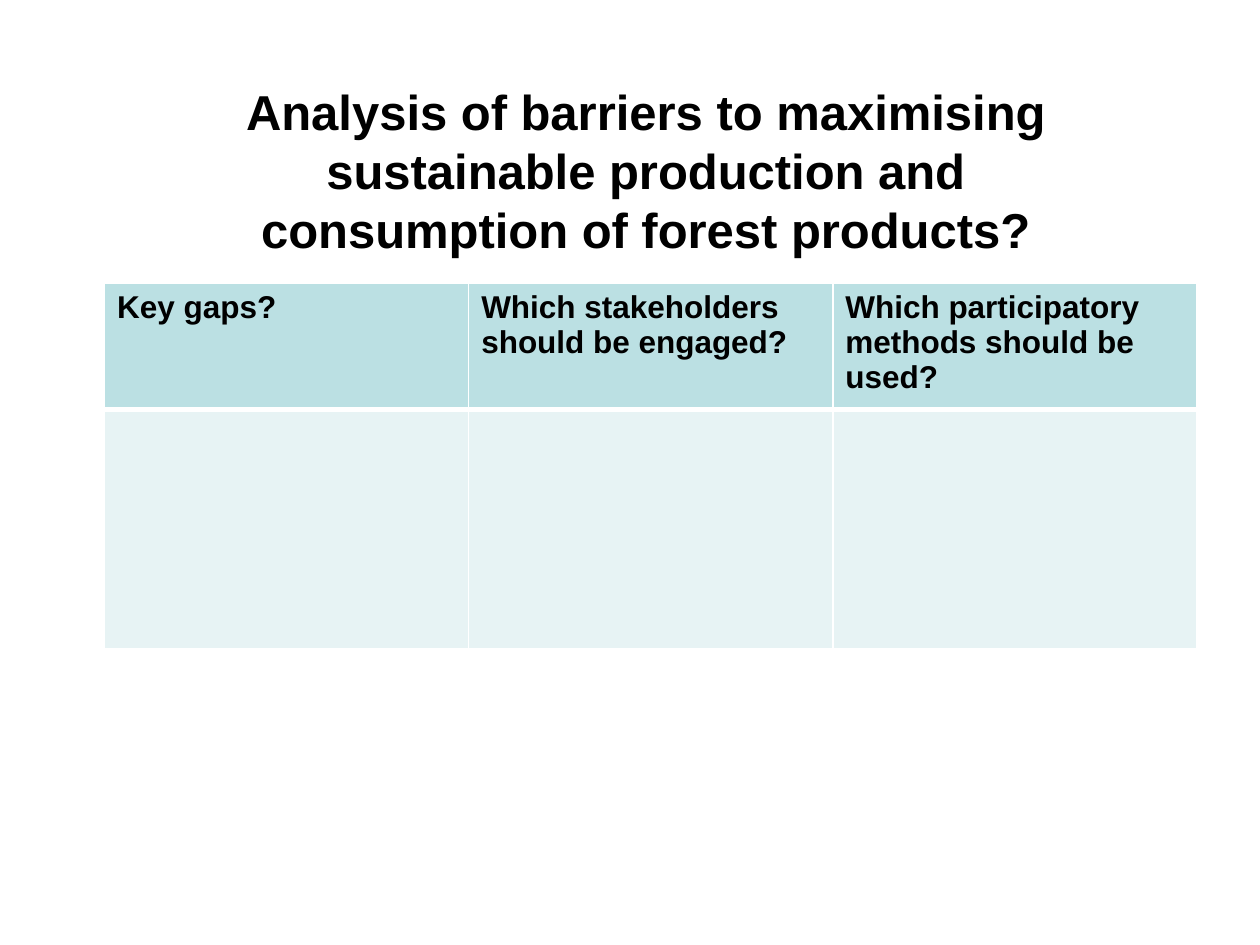
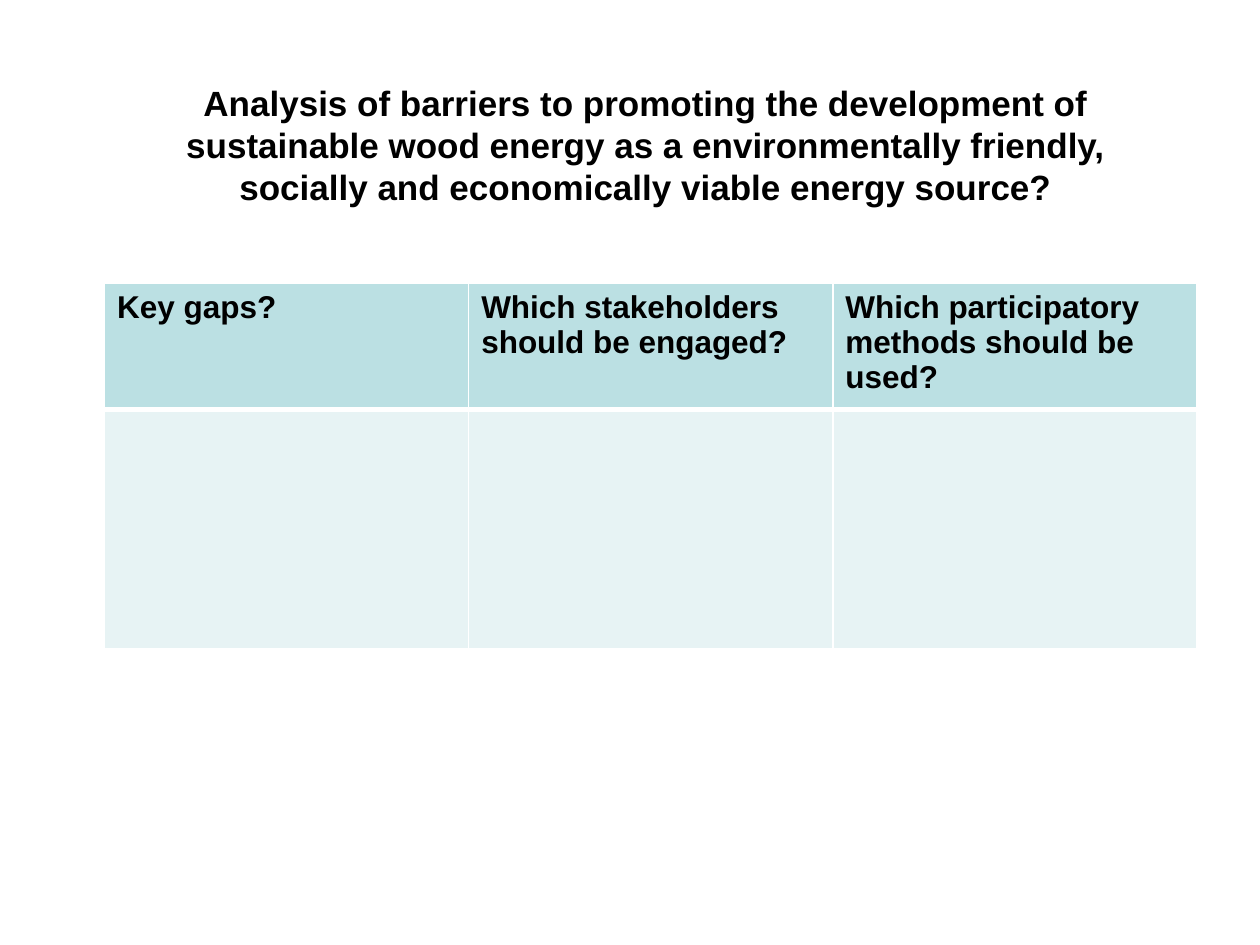
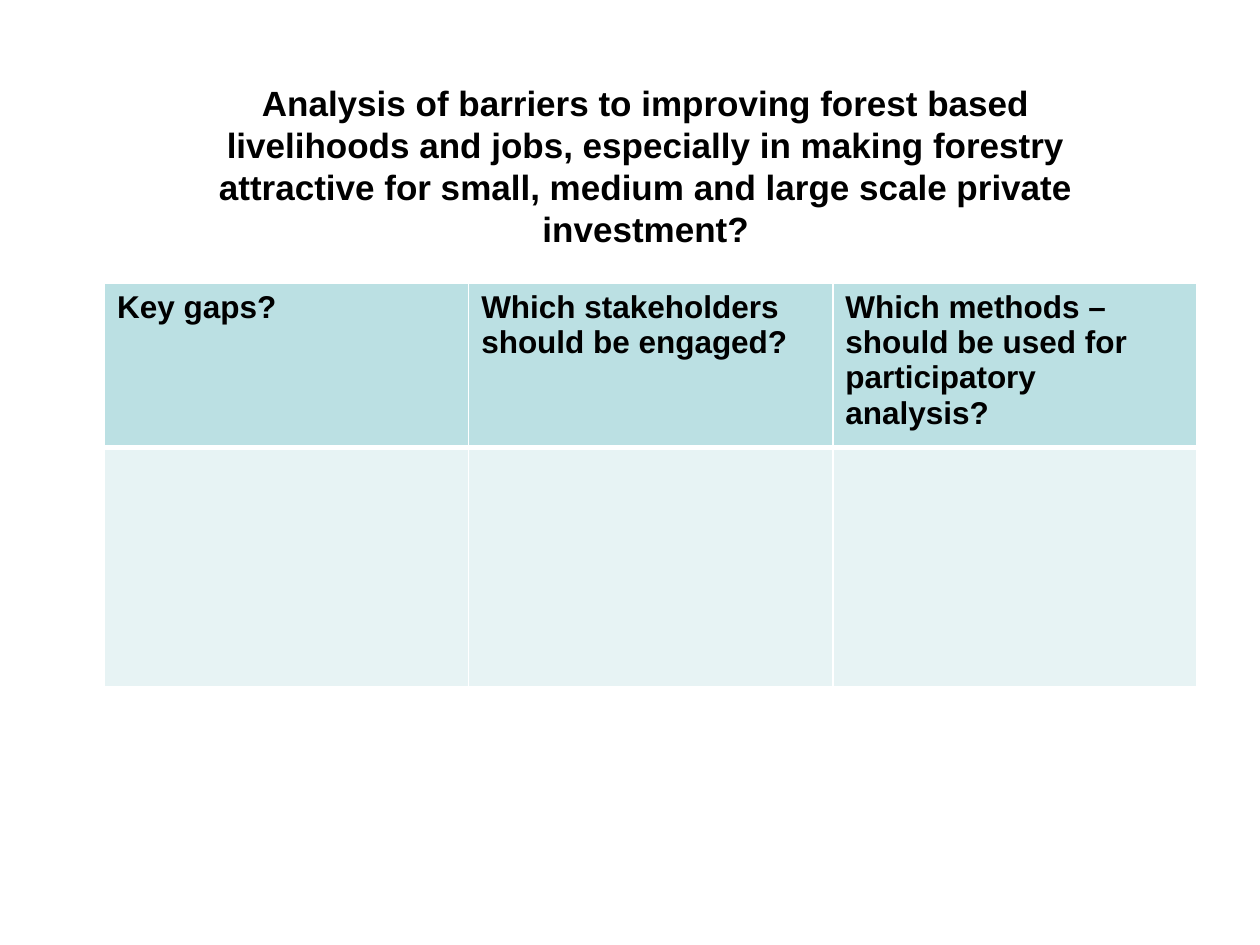
import dataclasses

import pptx
import pptx.dml.color
import pptx.enum.text
import pptx.oxml
import pptx.oxml.ns
import pptx.util

Inches = pptx.util.Inches
Pt = pptx.util.Pt


@dataclasses.dataclass(frozen=True)
class Theme:
    font: str = "Arial"
    text: str = "000000"
    header: str = "BBE0E3"
    body: str = "E7F3F4"
    border: str = "FFFFFF"
    large_title: int = 28
    small_title: int = 20
    title_leading: float = 1.2
    cell_size: int = 18
    cell_leading: float = 1.12
    thin: int = 1
    thick: int = 3


THEME = Theme()
STAKEHOLDERS = "Which stakeholders should be engaged?"
METHODS = "Which participatory methods should be used?"
SLIDES = [
    dict(
        title="Analysis of barriers to maximising sustainable production and "
              "consumption of forest products?",
        size=THEME.large_title, title_height=1.51, methods=METHODS, header_lines=3,
    ),
    dict(
        title="Analysis of barriers to promoting the development of sustainable wood "
              "energy as a environmentally friendly, socially and economically viable "
              "energy source?",
        size=THEME.small_title, title_height=1.11, methods=METHODS, header_lines=3,
    ),
    dict(
        title="Analysis of barriers to improving forest based livelihoods and jobs, "
              "especially in making forestry attractive for small, medium and large "
              "scale private investment?",
        size=THEME.small_title, title_height=1.45,
        methods="Which methods – should be used for participatory analysis?",
        header_lines=4,
    ),
]


def rgb(color):
    return pptx.dml.color.RGBColor.from_string(color)


def write(tf, text, *, size, leading, align=pptx.enum.text.PP_ALIGN.LEFT, bold=True):
    p = tf.paragraphs[0]
    p.alignment = align
    p.line_spacing = Pt(size * leading)
    r = p.add_run()
    r.text = text
    r.font.name = THEME.font
    r.font.size = Pt(size)
    r.font.bold = bold
    r.font.color.rgb = rgb(THEME.text)


def format_cell(cell, fill, top, bottom):
    cell.fill.solid()
    cell.fill.fore_color.rgb = rgb(fill)
    widths = {"lnL": THEME.thin, "lnR": THEME.thin, "lnT": top, "lnB": bottom}
    tcPr = cell._tc.get_or_add_tcPr()
    for i, (tag, width) in enumerate(widths.items()):
        ln = pptx.oxml.parse_xml(
            f'<a:{tag} {pptx.oxml.ns.nsdecls("a")} w="{Pt(width)}">'
            f'<a:solidFill><a:srgbClr val="{THEME.border}"/></a:solidFill></a:{tag}>'
        )
        tcPr.insert(i, ln)


def add_title(s, box, text, size):
    tf = s.shapes.add_textbox(*map(Inches, box)).text_frame
    tf.word_wrap = True
    tf.margin_top = Inches(0.07)
    write(tf, text, size=size, leading=THEME.title_leading,
          align=pptx.enum.text.PP_ALIGN.CENTER)


def add_gap_table(s, box, headings, header_height):
    x, y, w, h = box
    table = s.shapes.add_table(2, len(headings), *map(Inches, box)).table
    table.first_row = False
    table.horz_banding = False
    table.rows[0].height = Inches(header_height)
    table.rows[1].height = Inches(h - header_height)
    for i, heading in enumerate(headings):
        table.columns[i].width = Inches(w / len(headings))
        header, body = table.cell(0, i), table.cell(1, i)
        format_cell(header, THEME.header, THEME.thin, THEME.thick)
        format_cell(body, THEME.body, THEME.thick, THEME.thin)
        write(header.text_frame, heading, size=THEME.cell_size,
              leading=THEME.cell_leading)


def add_analysis_slide(prs, title, size, title_height, methods, header_lines):
    s = prs.slides.add_slide(prs.slide_layouts[6])
    header_height = 0.1 + 0.3 * header_lines
    add_gap_table(s, (0.83, 2.25, 8.67, header_height + 1.9),
                  ["Key gaps?", STAKEHOLDERS, methods], header_height)
    add_title(s, (1.25, 0.58, 7.75, title_height), title, size)


def main():
    prs = pptx.Presentation()
    prs.slide_width = Inches(10)
    prs.slide_height = Inches(7.5)
    for content in SLIDES:
        add_analysis_slide(prs, **content)
    prs.save("out.pptx")


if __name__ == "__main__":
    main()
